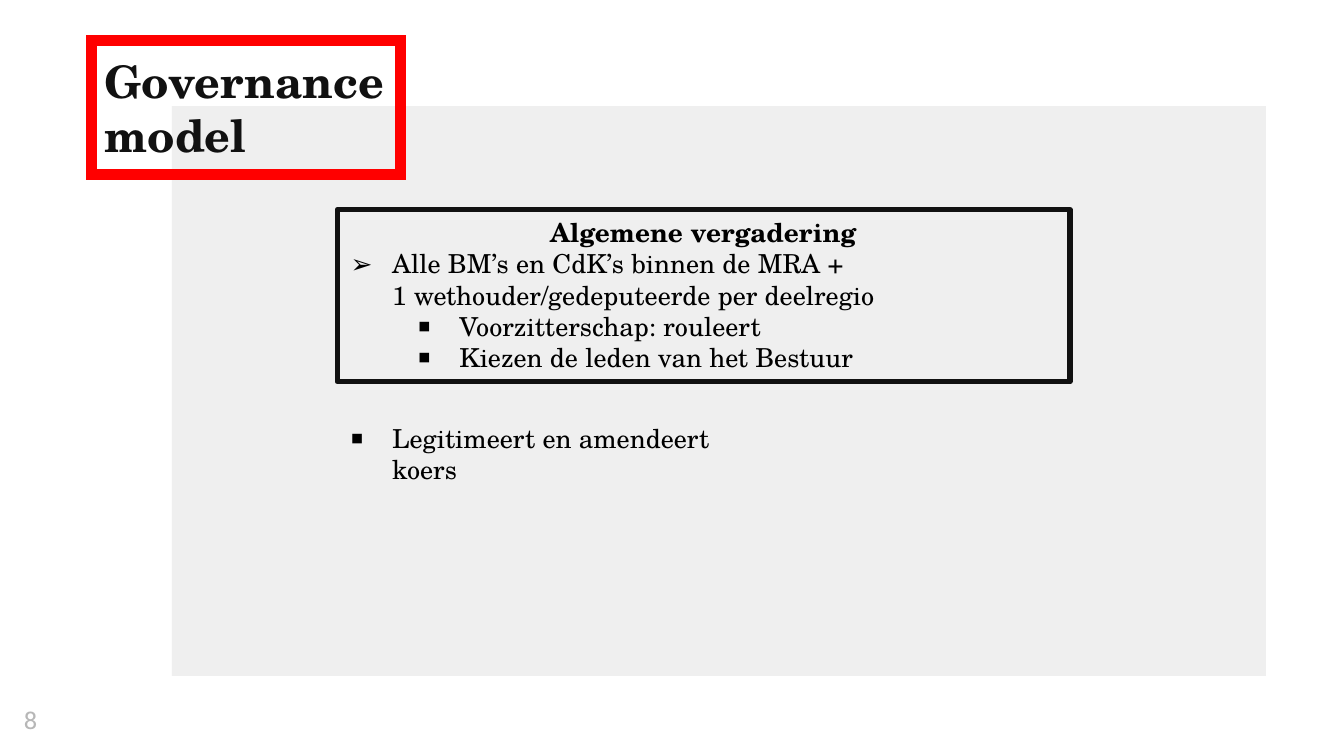
from typing import NamedTuple, Optional

import pptx
import pptx.dml.color
import pptx.enum.shapes
import pptx.enum.text
import pptx.oxml
import pptx.oxml.ns
import pptx.util

Inches = pptx.util.Inches
Pt = pptx.util.Pt
RGBColor = pptx.dml.color.RGBColor
Anchor = pptx.enum.text.MSO_ANCHOR
Align = pptx.enum.text.PP_ALIGN

WHITE = RGBColor(0xFF, 0xFF, 0xFF)
PANEL = RGBColor(0xEF, 0xEF, 0xEF)
RED = RGBColor(0xFF, 0x00, 0x00)
INK = RGBColor(0x11, 0x11, 0x11)
BLACK = RGBColor(0x00, 0x00, 0x00)
GREY = RGBColor(0xB7, 0xB7, 0xB7)
SERIF = "TeX Gyre Schola"
SLAB = "Roboto Slab"
HANG = 0.31


class Area(NamedTuple):
    left: float
    top: float
    width: float
    height: float


class Border(NamedTuple):
    color: RGBColor
    width: float
    join: str


class Para(NamedTuple):
    text: str
    size: float = 14
    color: RGBColor = BLACK
    font: str = SERIF
    bold: bool = False
    align: Align = Align.LEFT
    bullet: str = ""
    level: int = 0


class Box(NamedTuple):
    area: Area
    paras: list[Para]
    border: Optional[Border] = None
    inset: float = 0.05
    anchor: Anchor = Anchor.TOP


BOXES = [
    Box(Area(0.68, 0.3, 2.3, 1),
        [Para("Governancemodel", 24, INK, bold=True)],
        Border(RED, 6, "miter"), 0.1, Anchor.MIDDLE),
    Box(Area(0.08, 5.14, 0.6, 0.43),
        [Para("8", 13, GREY, SLAB)], inset=0.1, anchor=Anchor.MIDDLE),
    Box(Area(2.51, 1.56, 5.45, 1.28),
        [Para("Algemene vergadering", bold=True, align=Align.CENTER),
         Para("Alle BM’s en CdK’s binnen de MRA +\v"
              "1 wethouder/gedeputeerde per deelregio", bullet="➢"),
         Para("Voorzitterschap: rouleert", bullet="▪", level=1),
         Para("Kiezen de leden van het Bestuur", bullet="▪", level=1)],
        Border(INK, 3, "round")),
    Box(Area(2.51, 3.09, 3.28, 0.34),
        [Para("Legitimeert en amendeert koers", bullet="▪")]),
]


def add_rect(slide, area: Area, fill: Optional[RGBColor] = None,
             border: Optional[Border] = None):
    kind = pptx.enum.shapes.MSO_SHAPE.RECTANGLE
    shape = slide.shapes.add_shape(kind, *map(Inches, area))
    shape.shadow.inherit = False
    if fill is None:
        shape.fill.background()
    else:
        shape.fill.solid()
        shape.fill.fore_color.rgb = fill
    if border is None:
        shape.line.fill.background()
    else:
        shape.line.color.rgb = border.color
        shape.line.width = Pt(border.width)
        add_child(shape.line._get_or_add_ln(), f"a:{border.join}")
    return shape


def add_child(parent, tag: str, **attrs: str):
    child = pptx.oxml.parse_xml(f"<{tag} {pptx.oxml.ns.nsdecls('a')}/>")
    for name, value in attrs.items():
        child.set(name, value)
    parent.append(child)
    return child


def set_bullet(paragraph, para: Para) -> None:
    """Give the paragraph a black bullet and a hanging indent."""
    props = paragraph._p.get_or_add_pPr()
    props.set("marL", str(Inches(HANG + 0.5 * para.level)))
    props.set("indent", str(Inches(-HANG)))
    color = add_child(props, "a:buClr")
    add_child(color, "a:srgbClr", val=str(BLACK))
    add_child(props, "a:buFont", typeface=para.font)
    add_child(props, "a:buChar", char=para.bullet)


def add_para(paragraph, para: Para) -> None:
    paragraph.text = para.text
    paragraph.alignment = para.align
    paragraph.level = para.level
    if para.bullet:
        set_bullet(paragraph, para)
    font = paragraph.font
    font.name = para.font
    font.size = Pt(para.size)
    font.bold = para.bold
    font.color.rgb = para.color


def add_box(slide, box: Box) -> None:
    if box.border:
        shape = add_rect(slide, box.area, border=box.border)
    else:
        shape = slide.shapes.add_textbox(*map(Inches, box.area))
    frame = shape.text_frame
    frame.word_wrap = True
    frame.vertical_anchor = box.anchor
    frame.margin_top = frame.margin_bottom = Inches(box.inset)
    frame.margin_left = frame.margin_right = Inches(0.1)
    for index, para in enumerate(box.paras):
        add_para(frame.add_paragraph() if index else frame.paragraphs[0], para)


def main() -> None:
    deck = pptx.Presentation()
    deck.slide_width = Inches(10)
    deck.slide_height = deck.slide_width * 9 // 16
    slide = deck.slides.add_slide(deck.slide_layouts[6])
    slide.background.fill.solid()
    slide.background.fill.fore_color.rgb = WHITE
    add_rect(slide, Area(1.28, 0.79, 8.14, 4.24), PANEL)
    for box in BOXES:
        add_box(slide, box)
    deck.save("out.pptx")


if __name__ == "__main__":
    main()
